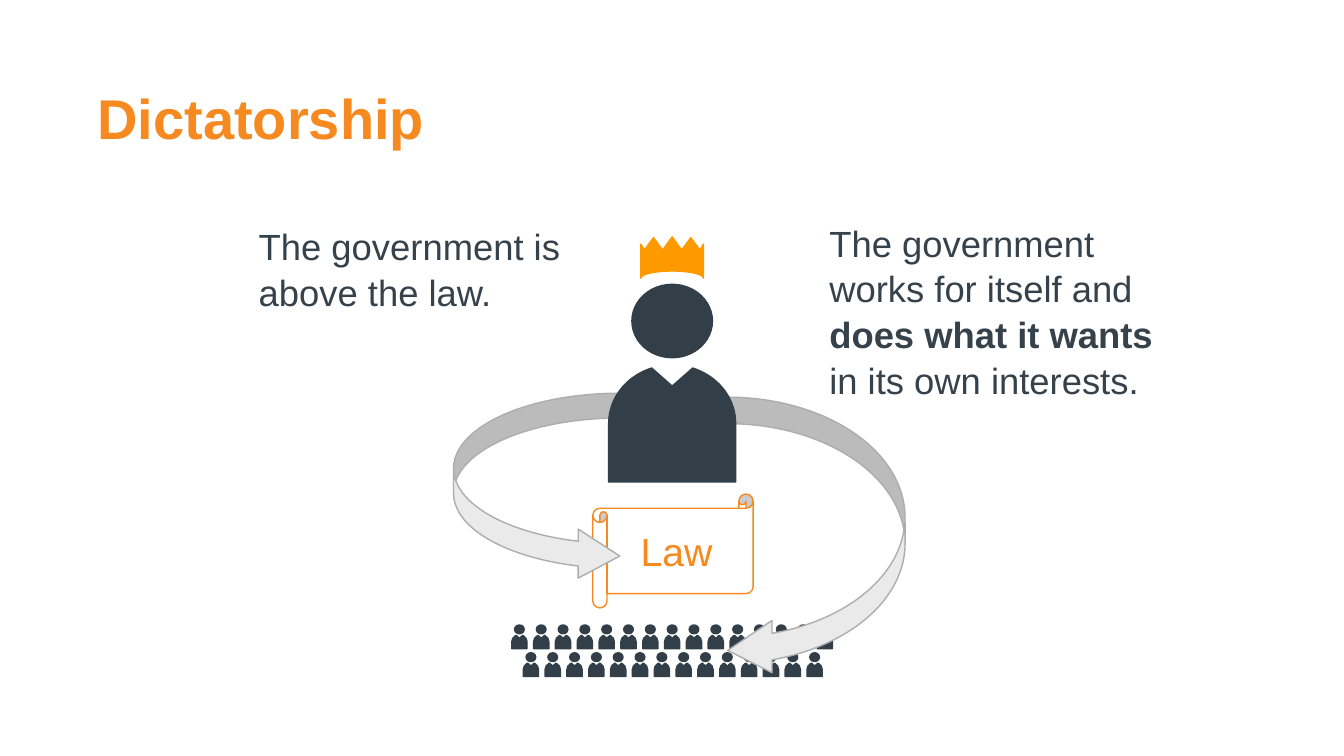
"""Build a slide on dictatorship: a ruler above the law and the people."""
import math

from pptx import Presentation
from pptx.dml.color import RGBColor
from pptx.enum.shapes import MSO_SHAPE
from pptx.enum.text import MSO_ANCHOR, PP_ALIGN
from pptx.util import Cm, Pt

SCROLL = MSO_SHAPE.HORIZONTAL_SCROLL
BODY = MSO_SHAPE.FLOWCHART_DELAY
TRIANGLE = MSO_SHAPE.ISOSCELES_TRIANGLE
OVAL = MSO_SHAPE.OVAL
CURVED_ARROW = MSO_SHAPE.CURVED_RIGHT_ARROW
TOP, MIDDLE = MSO_ANCHOR.TOP, MSO_ANCHOR.MIDDLE
CENTER = PP_ALIGN.CENTER

COLORS = {
    "orange": "F6891F",
    "crown": "FF9900",
    "person": "333F48",
    "text": "36424B",
    "white": "FFFFFF",
    "arrow": "EAEAEA",
    "arrow_line": "ADADAD",
}


class SlideBuilder:
    """Holds the slide and its style; lengths are in centimetres."""

    font_name = "Arial"

    def __init__(self, slide):
        self.slide = slide

    def color(self, name):
        return RGBColor.from_string(COLORS[name])

    def paint(self, shape, fill, line=None):
        shape.shadow.inherit = False
        shape.fill.solid()
        shape.fill.fore_color.rgb = self.color(fill)
        if line:
            shape.line.color.rgb = self.color(line)
            shape.line.width = Pt(1)
        else:
            shape.line.fill.background()

    def shape(self, kind, left, top, width, height, fill, line=None, shapes=None):
        shapes = shapes or self.slide.shapes
        shape = shapes.add_shape(kind, Cm(left), Cm(top), Cm(width), Cm(height))
        self.paint(shape, fill, line)
        return shape

    def style(self, paragraph, size, color):
        paragraph.font.name = self.font_name
        paragraph.font.size = Pt(size)
        paragraph.font.color.rgb = self.color(color)

    def text(self, left, top, width, height, runs, size, color, spacing):
        box = self.slide.shapes.add_textbox(Cm(left), Cm(top), Cm(width), Cm(height))
        frame = box.text_frame
        frame.word_wrap = True
        frame.vertical_anchor = TOP
        paragraph = frame.paragraphs[0]
        paragraph.line_spacing = spacing
        self.style(paragraph, size, color)
        for words, bold in runs:
            run = paragraph.add_run()
            run.text = words
            run.font.bold = bold
        return frame

    def title(self, words):
        frame = self.text(2.46, 2.29, 28.96, 2.54, [(words, True)], 40, "orange", 0.9)
        frame.margin_left = frame.margin_right = 0
        frame.margin_top = frame.margin_bottom = 0

    def scroll(self, left, top, width, height, words):
        shape = self.shape(SCROLL, left, top, width, height, "white", "orange")
        shape.text_frame.vertical_anchor = MIDDLE
        paragraph = shape.text_frame.paragraphs[0]
        paragraph.text = words
        paragraph.alignment = CENTER
        self.style(paragraph, 28, "orange")

    def crown(self, center, bottom, half_width, arch_height):
        peaks = [(0, 1.04), (0.24, 0.71), (0.47, 1.02), (0.7, 0.71), (half_width, 0.86)]
        right = [(x, -rise) for x, rise in peaks]
        left = [(-x, y) for x, y in reversed(right)]
        angles = [math.radians(degrees) for degrees in range(0, 181, 10)]
        arch = [(half_width * math.cos(angle), -arch_height * math.sin(angle)) for angle in angles]
        points = [(Cm(center + x), Cm(bottom + y)) for x, y in right + arch + left]
        builder = self.slide.shapes.build_freeform(*points[0])
        builder.add_line_segments(points[1:-1], close=True)
        self.paint(builder.convert_to_shape(), "crown", "crown")

    def person(self, center, middle, scale, group):
        parts = [
            (BODY, 0, 2.95, 3.2, 270, "person", "person"),
            (TRIANGLE, -1.63, 3, 1.32, 180, "white", None),
            (OVAL, -2.58, 2.03, 1.85, 0, "person", "person"),
        ]
        for kind, offset, width, height, rotation, fill, line in parts:
            width, height = width * scale, height * scale
            part = self.shape(kind, center - width / 2, middle + offset * scale - height / 2,
                              width, height, fill, line, group.shapes)
            part.rotation = rotation

    def crowd(self, rows, pitch, scale):
        group = self.slide.shapes.add_group_shape()
        for start, middle, count in rows:
            for index in range(count):
                self.person(start + index * pitch, middle, scale, group)

    def arrow(self, left, top, width, height, mirrored=False):
        shape = self.shape(CURVED_ARROW, left, top, width, height, "arrow", "arrow_line")
        for index, value in enumerate((0.149, 0.295, 0.25)):
            shape.adjustments[index] = value
        if mirrored:
            shape._element.spPr.xfrm.set("flipH", "1")


def main():
    presentation = Presentation()
    presentation.slide_width, presentation.slide_height = Cm(33.87), Cm(19.05)
    slide = presentation.slides.add_slide(presentation.slide_layouts[6])
    builder = SlideBuilder(slide)

    builder.title("Dictatorship")
    builder.scroll(14.94, 12.45, 4.04, 2.87, "Law")
    builder.crown(16.94, 7.01, 0.79, 0.18)
    builder.crowd([(13.09, 16.17, 15), (13.38, 16.87, 14)], 0.55, 0.12)
    builder.arrow(11.43, 9.91, 4.19, 4.72)
    builder.arrow(18.34, 10.01, 4.47, 7.04, mirrored=True)
    builder.person(16.94, 10.67, 1, slide.shapes.add_group_shape())

    works_for_itself = [
        ("The government works for itself and ", False),
        ("does what it wants ", True),
        ("in its own interests.", False),
    ]
    builder.text(20.65, 5.38, 9.4, 4.7, works_for_itself, 26, "text", 1.05)
    above_the_law = [("The government is above the law.", False)]
    builder.text(6.27, 5.46, 8.33, 2.49, above_the_law, 26, "text", 1.05)

    presentation.save("out.pptx")


if __name__ == "__main__":
    main()
